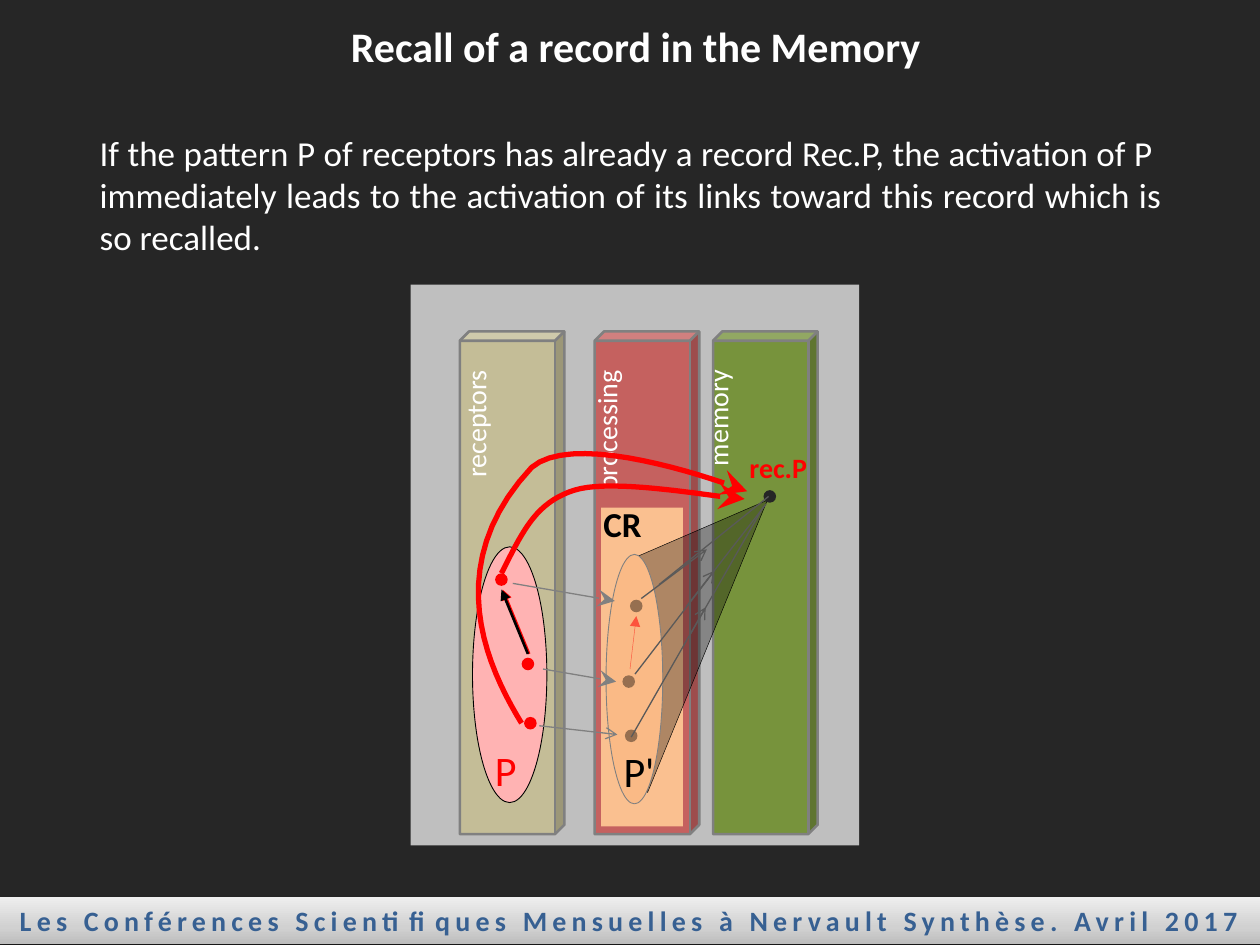
from dataclasses import dataclass
from typing import Optional

from lxml import etree
from pptx import Presentation
from pptx import util as u
from pptx.dml.color import RGBColor
from pptx.enum import shapes, text
from pptx.oxml import parse_xml
from pptx.oxml.ns import nsdecls, qn

SCALE = 9144  # EMU in one px, 100 px to the inch
FONT = "Calibri"
DOT = 10
WHITE, BLACK, RED, GREY = "FFFFFF", "000000", "FF0000", "808080"
DARK, SLATE = "262626", "595959"
KIND = shapes.MSO_SHAPE
ALIGN = text.PP_ALIGN


@dataclass
class Format:
    size: int
    color: str = WHITE
    bold: bool = False
    align: int = ALIGN.LEFT
    wrap: bool = True


@dataclass
class Block:
    kind: int
    left: int
    top: int
    width: int
    height: int
    fill: str
    line: Optional[str] = None
    weight: float = 1.5
    alpha: int = 100
    depth: Optional[float] = None


@dataclass
class Arrow:
    start: tuple
    end: tuple
    color: str = SLATE
    weight: float = 0.75
    head: Optional[str] = None
    head_size: str = "med"
    alpha: int = 100


def px(value: float) -> int:
    return u.Emu(round(value * SCALE))


def rgb(color: str) -> RGBColor:
    return RGBColor.from_string(color)


def set_alpha(shape, part: str, percent: int) -> None:
    if percent < 100:
        for color in shape.element.xpath(f"p:spPr/{part}a:solidFill/a:srgbClr"):
            etree.SubElement(color, qn("a:alpha"), val=str(percent * 1000))


def stroke(shape, color: str, weight: float, head=None, head_size="med") -> None:
    """Colour an outline and give it an optional arrowhead at its end."""
    shape.line.color.rgb = rgb(color)
    shape.line.width = u.Pt(weight)
    if head:
        etree.SubElement(shape.line._get_or_add_ln(), qn("a:tailEnd"),
                         type=head, w=head_size, len=head_size)


def draw_block(page, block: Block):
    shape = page.shapes.add_shape(block.kind, px(block.left), px(block.top),
                                  px(block.width), px(block.height))
    shape.shadow.inherit = False
    shape.fill.solid()
    shape.fill.fore_color.rgb = rgb(block.fill)
    set_alpha(shape, "", block.alpha)
    if block.depth:
        shape.adjustments[0] = block.depth
    if block.line:
        stroke(shape, block.line, block.weight)
    else:
        shape.line.fill.background()
    return shape


def draw_dot(page, left: int, top: int, color: str, alpha: int = 100) -> None:
    draw_block(page, Block(KIND.OVAL, left, top, DOT, DOT, color, alpha=alpha))


def draw_arrow(page, arrow: Arrow) -> None:
    line = page.shapes.add_connector(shapes.MSO_CONNECTOR.STRAIGHT,
                                     *map(px, arrow.start + arrow.end))
    stroke(line, arrow.color, arrow.weight, arrow.head, arrow.head_size)
    set_alpha(line, "a:ln/", arrow.alpha)
    etree.SubElement(line.element.spPr, qn("a:effectLst"))


def draw_path(page, points: list, close: bool):
    """Draw an outline through points given in px."""
    (x, y), *rest = [(px(x), px(y)) for x, y in points]
    builder = page.shapes.build_freeform(x, y, scale=1.0)
    builder.add_line_segments(rest, close=close)
    shape = builder.convert_to_shape()
    shape.shadow.inherit = False
    return shape


def bezier(p0, p1, p2, p3, steps: int = 20) -> list:
    """Points along a cubic curve, without its first point."""
    def at(t, axis):
        s = 1 - t
        return (s**3 * p0[axis] + 3 * s * s * t * p1[axis]
                + 3 * s * t * t * p2[axis] + t**3 * p3[axis])
    return [(at(i / steps, 0), at(i / steps, 1)) for i in range(1, steps + 1)]


def draw_recall(page, knots: list) -> None:
    """Draw a thick red arrow along the cubic curves that share the knots."""
    points = [knots[0]]
    for i in range(0, len(knots) - 1, 3):
        points += bezier(*knots[i:i + 4])
    curve = draw_path(page, points, close=False)
    curve.fill.background()
    stroke(curve, RED, 3, "stealth", "lg")


def write(shape, words: str, style: Format):
    frame = shape.text_frame
    frame.word_wrap = style.wrap
    frame.auto_size = text.MSO_AUTO_SIZE.NONE
    para = frame.paragraphs[0]
    para.alignment = style.align
    para.space_before = u.Pt(0)
    span = para.add_run()
    span.text = words
    values = {"name": FONT, "size": u.Pt(style.size), "bold": style.bold}
    for name, value in values.items():
        setattr(span.font, name, value)
    span.font.color.rgb = rgb(style.color)
    return span


def place(shape, left: int, top: int, width: int, height: int) -> None:
    box = {"left": left, "top": top, "width": width, "height": height}
    for name, value in box.items():
        setattr(shape, name, px(value))


def draw_label(page, words: str, box: tuple, style: Format, upright=False) -> None:
    label = page.shapes.add_textbox(*map(px, box))
    write(label, words, style)
    if upright:
        label.text_frame._txBody.bodyPr.set("vert", "vert270")


def draw_footer(page) -> None:
    footer = draw_block(page, Block(KIND.RECTANGLE, 0, 712, 1000, 37, "D1D1D1"))
    stops = "".join(f'<a:gs pos="{at}000"><a:srgbClr val="{color}"/></a:gs>'
                    for at, color in ((0, "BDBDBD"), (35, "D1D1D1"), (100, "EEEEEE")))
    gradient = parse_xml(f'<a:gradFill {nsdecls("a")}><a:gsLst>{stops}</a:gsLst>'
                         '<a:lin ang="16200000" scaled="0"/></a:gradFill>')
    properties = footer.element.spPr
    properties.replace(properties.find(qn("a:solidFill")), gradient)
    properties.find(qn("a:effectLst")).append(parse_xml(
        f'<a:outerShdw {nsdecls("a")} blurRad="40000" dist="20000" dir="5400000" '
        'rotWithShape="0"><a:srgbClr val="000000"><a:alpha val="38000"/>'
        '</a:srgbClr></a:outerShdw>'))
    span = write(footer, "Les Conférences Scientifiques Mensuelles à Nervault Synthèse. Avril 2017",
                 Format(16, "376092", True, ALIGN.CENTER, wrap=False))
    span.font._element.set("spc", "300")


def fill_placeholders(page) -> None:
    title, body = page.shapes.title, page.placeholders[1]
    place(title, 105, 11, 799, 50)
    write(title, "Recall of a record in the Memory", Format(24, bold=True, align=ALIGN.CENTER))
    place(body, 69, 99, 863, 111)
    write(body, "If the pattern P of receptors has already a record Rec.P, the activation of P  "
          "immediately leads to the activation of its links toward this record which is "
          "so recalled.", Format(20, align=ALIGN.JUSTIFY))
    for shape in (title, body):
        shape.text_frame.vertical_anchor = text.MSO_ANCHOR.TOP
    bullet = body.text_frame.paragraphs[0]._p.get_or_add_pPr()
    bullet.set("marL", "0")
    bullet.set("indent", "0")
    etree.SubElement(bullet, qn("a:buNone"))


def draw_columns(page) -> None:
    draw_block(page, Block(KIND.RECTANGLE, 326, 226, 356, 445, "BFBFBF"))
    for left, color in ((365, "C4BD97"), (472, "C5615F"), (566, "77933C")):
        draw_block(page, Block(KIND.CUBE, left, 263, 83, 399, color, GREY, depth=0.09))
    draw_block(page, Block(KIND.RECTANGLE, 477, 403, 65, 253, "FAC090"))
    funnel = draw_path(page, [(505, 442), (609, 397), (514, 629)], close=True)
    funnel.fill.solid()
    funnel.fill.fore_color.rgb = rgb(BLACK)
    set_alpha(funnel, "", 30)
    stroke(funnel, BLACK, 0.25)
    draw_block(page, Block(KIND.OVAL, 481, 440, 45, 198, "FABA86", GREY, 0.5))
    for words, left in (("receptors", 359), ("processing", 463), ("memory", 551)):
        draw_label(page, words, (left, 284, 47, 165), Format(16, align=ALIGN.RIGHT), upright=True)
    draw_label(page, "CR", (469, 394, 76, 44), Format(20, BLACK, True))


def draw_processing(page) -> None:
    draw_arrow(page, Arrow((500, 531), (505, 489), RED, 0.25, "triangle", alpha=55))
    for left, top in ((496, 579), (494, 536), (500, 476)):
        draw_dot(page, left, top, BLACK, 40)
    draw_dot(page, 606, 389, DARK)
    for start, middle, restart, end in (
            ((509, 475), (561, 436), (523, 464), (610, 394)),
            ((504, 535), (567, 453), (545, 481), (608, 400)),
            ((501, 585), (560, 482), (547, 505), (606, 402))):
        draw_arrow(page, Arrow(start, middle, head="arrow"))
        draw_arrow(page, Arrow(restart, end))
    draw_label(page, "P'", (485, 587, 49, 50), Format(24, BLACK))


def draw_receptors(page) -> None:
    draw_block(page, Block(KIND.OVAL, 375, 434, 59, 203, "FFB3B3", BLACK, 0.5))
    for shift, color in ((1, RED), (0, BLACK)):
        draw_arrow(page, Arrow((419 + shift, 519), (398 + shift, 468), color, 1.5, "triangle"))
    draw_label(page, "P", (383, 586, 49, 50), Format(24, RED))
    for left, top in ((416, 569), (414, 522), (393, 455)):
        draw_dot(page, left, top, RED)
    draw_arrow(page, Arrow((428, 576), (490, 583), GREY, head="arrow"))
    for start, end in (((407, 463), (488, 477)), ((431, 531), (489, 541))):
        draw_arrow(page, Arrow(start, end, GREY, head="stealth", head_size="lg"))


def main() -> None:
    deck = Presentation()
    deck.slide_width, deck.slide_height = px(1000), px(750)
    page = deck.slides.add_slide(deck.slide_layouts[1])
    page.background.fill.solid()
    page.background.fill.fore_color.rgb = rgb(DARK)
    draw_footer(page)
    fill_placeholders(page)
    draw_columns(page)
    draw_processing(page)
    draw_receptors(page)
    draw_recall(page, [(398, 455), (414, 424), (424, 399), (456, 389),
                       (488, 379), (569, 395), (591, 396)])
    draw_recall(page, [(414, 574), (387, 530), (349, 449), (422, 371),
                       (460, 338), (593, 390), (593, 390)])
    draw_label(page, "rec.P", (585, 353, 67, 37), Format(16, RED, True, wrap=False))
    deck.save("out.pptx")


if __name__ == "__main__":
    main()
